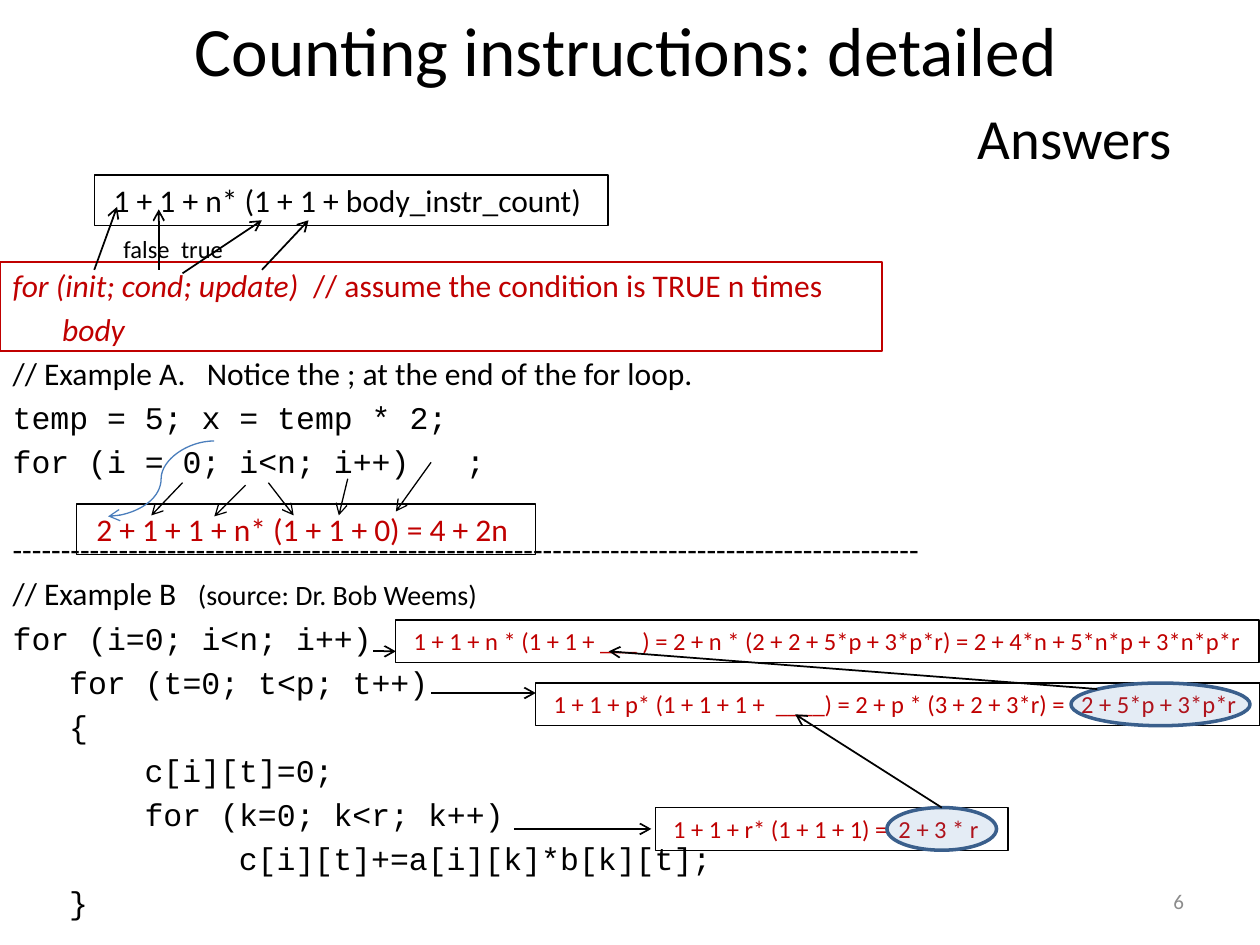
from lxml import etree
from pptx import Presentation
from pptx import util as u
from pptx.dml import color
from pptx.enum import shapes as sh, text as tx
from pptx.oxml import ns


class Theme:
    sans, mono = "Calibri", "Courier New"
    black, red, grey = "000000", "C00000", "8C8C8C"
    blue, navy, curve = "4F81BD", "3A5F8C", "4B7EBC"
    title, sub, body, note, small, foot = 39.6, 32.4, 18, 16, 14, 12
    thin, thick, ring = 0.75, 1, 2
    pitch = 25.2  # distance between body lines, pt
    step = 0.38   # width of one code character, cm
    alpha = 15    # opacity of a highlight, percent


def rgb(code):
    return color.RGBColor.from_string(code)


def apply(obj, **vals):
    for key, val in vals.items():
        setattr(obj, key, val)


class Deck:
    def __init__(self, wide, high):
        self.prs = Presentation()
        apply(self.prs, slide_width=u.Cm(wide), slide_height=u.Cm(high))
        self.page = self.prs.slides.add_slide(self.prs.slide_layouts[1])
        self.items = self.page.shapes

    def run(self, par, words, size=Theme.body, hue=Theme.black,
            face=Theme.sans, slant=False):
        run = par.add_run()
        run.text = words
        apply(run.font, size=u.Pt(size), name=face, italic=slant)
        run.font.color.rgb = rgb(hue)

    def place(self, item, left, top, wide, high):
        apply(item, left=u.Cm(left), top=u.Cm(top),
              width=u.Cm(wide), height=u.Cm(high))

    def title(self, spot, head, sub):
        item = self.items.title
        self.place(item, *spot)
        frame = item.text_frame
        apply(frame, auto_size=tx.MSO_AUTO_SIZE.NONE, word_wrap=True,
              vertical_anchor=tx.MSO_ANCHOR.MIDDLE,
              margin_left=u.Cm(1.42), margin_right=u.Cm(1.78))
        par = frame.paragraphs[0]
        par.alignment = tx.PP_ALIGN.CENTER
        self.run(par, head, Theme.title)
        par = frame.add_paragraph()
        apply(par, alignment=tx.PP_ALIGN.RIGHT, space_before=u.Pt(7))
        self.run(par, sub, Theme.sub)

    def body(self, spot, rows):
        """Each row is (indent in cm, space before in pt, runs)."""
        item = self.page.placeholders[1]
        self.place(item, *spot)
        frame = item.text_frame
        apply(frame, auto_size=tx.MSO_AUTO_SIZE.NONE, word_wrap=True,
              margin_top=u.Cm(0.58))
        for num, (dent, gap, runs) in enumerate(rows):
            par = frame.add_paragraph() if num else frame.paragraphs[0]
            apply(par, line_spacing=u.Pt(Theme.pitch), space_before=u.Pt(gap))
            props = par._p.get_or_add_pPr()
            props.set("marL", str(u.Cm(dent)))
            props.set("indent", "0")
            etree.SubElement(props, ns.qn("a:buNone"))
            for words, style in runs:
                self.run(par, words, **style)

    def label(self, spot, words, wrap=False, side=tx.PP_ALIGN.LEFT,
              anchor=tx.MSO_ANCHOR.TOP, **style):
        item = self.items.add_textbox(*map(u.Cm, spot))
        self.fill_in(item, words, wrap, side, anchor, style)

    def fill_in(self, item, words, wrap, side, anchor, style):
        frame = item.text_frame
        apply(frame, word_wrap=wrap, vertical_anchor=anchor)
        par = frame.paragraphs[0]
        par.alignment = side
        self.run(par, words, **style)

    def shape(self, kind, spot, hue, width):
        item = self.items.add_shape(kind, *map(u.Cm, spot))
        item.shadow.inherit = False
        item.fill.background()
        item.line.color.rgb = rgb(hue)
        item.line.width = u.Pt(width)
        return item

    def box(self, spot, words="", edge=Theme.black, **style):
        item = self.shape(sh.MSO_SHAPE.RECTANGLE, spot, edge, Theme.thin)
        if words:
            self.fill_in(item, words, False, tx.PP_ALIGN.LEFT,
                         tx.MSO_ANCHOR.TOP, style)

    def oval(self, spot):
        """Ring with a see-through fill."""
        item = self.shape(sh.MSO_SHAPE.OVAL, spot, Theme.navy, Theme.ring)
        item.fill.solid()
        item.fill.fore_color.rgb = rgb(Theme.blue)
        tint = item._element.spPr.find(".//" + ns.qn("a:srgbClr"))
        etree.SubElement(tint, ns.qn("a:alpha"), val=str(Theme.alpha * 1000))
        return item

    def arrow(self, ends, width, hue=Theme.black,
              kind=sh.MSO_CONNECTOR.STRAIGHT):
        item = self.items.add_connector(kind, *map(u.Cm, ends))
        item.line.color.rgb = rgb(hue)
        item.line.width = u.Pt(width)
        etree.SubElement(item.line._get_or_add_ln(), ns.qn("a:tailEnd"),
                         type="arrow")
        etree.SubElement(item._element.spPr, ns.qn("a:effectLst"))
        return item


def code(words, chars=0):
    return chars * Theme.step, 0, [(words, {"face": Theme.mono})]


def main():
    deck = Deck(25.4, 19.05)
    red = {"hue": Theme.red}
    slant = {**red, "slant": True}
    small = {**red, "size": Theme.small}

    deck.title((0.2, 0.2, 25.2, 3.18),
               "Counting instructions: detailed", "Answers")
    deck.body((0, 4.65, 20.32, 14.4), [
        (0, 0, [("for (init; cond; update)  ", slant),
                ("// assume the condition is TRUE n times", red)]),
        (1, 0, [("body", slant)]),
        (0, 0, [("// Example A.   Notice the ; at the end of the for loop.",
                 {})]),
        code("temp = 5; x = temp * 2;"),
        code("for (i = 0; i<n; i++)   ;"),
        (0, Theme.pitch, [("-" * 94, {})]),
        (0, 0, [("// Example B   ", {}),
                ("(source: Dr. Bob Weems)", {"size": Theme.note})]),
        code("for (i=0; i<n; i++)"),
        code("for (t=0; t<p; t++)", 3),
        code("{", 3),
        code("c[i][t]=0;", 7),
        code("for (k=0; k<r; k++)", 7),
        code("c[i][t]+=a[i][k]*b[k][t];", 12),
        code("}", 3),
    ])
    deck.label((18.2, 17.65, 5.92, 1.02), "6", True, tx.PP_ALIGN.RIGHT,
               tx.MSO_ANCHOR.MIDDLE, size=Theme.foot, hue=Theme.grey)

    deck.box((0, 5.28, 17.78, 1.8), edge=Theme.red)
    for spot, words, style in [
        ((1.9, 3.53, 10.36, 1.02),
         " 1 + 1 + n* (1 + 1 + body_instr_count)", {}),
        ((1.55, 10.16, 9.25, 1.02),
         " 2 + 1 + 1 + n* (1 + 1 + 0) = 4 + 2n", red),
        ((7.98, 12.5, 17.4, 0.86),
         " 1 + 1 + n * (1 + 1 + ___ ) = 2 + n * (2 + 2 + 5*p + 3*p*r)"
         " = 2 + 4*n + 5*n*p + 3*n*p*r", small),
        ((10.8, 13.77, 14.6, 0.86),
         " 1 + 1 + p* (1 + 1 + 1 +  ____) = 2 + p * (3 + 2 + 3*r)"
         " =   2 + 5*p + 3*p*r", small),
        ((13.21, 16.28, 7.11, 0.86),
         " 1 + 1 + r* (1 + 1 + 1) =  2 + 3 * r", small),
    ]:
        deck.box(spot, words, **style)
    for left, wide, words in [(2.24, 1.45, "false"), (3.4, 1.37, "true")]:
        deck.label((left, 4.6, wide, 0.86), words, size=Theme.small)

    inner = deck.oval((17.88, 16.28, 2.21, 0.86))
    deck.oval((21.59, 13.77, 3.61, 0.86))

    for ends in [(3.68, 9.73, 3.05, 10.39), (4.95, 9.78, 4.32, 10.41),
                 (5.41, 9.73, 5.92, 10.39), (7.01, 9.65, 6.83, 10.39),
                 (8.69, 9.32, 7.98, 10.31)]:
        deck.arrow(ends, Theme.thin)
    for ends in [(1.9, 5.44, 2.36, 4.17), (3.2, 5.44, 3.2, 4.22),
                 (3.68, 5.51, 5.28, 4.44), (5.28, 5.44, 6.22, 4.44),
                 (7.52, 13.13, 7.98, 13.13), (8.69, 13.97, 10.8, 13.97),
                 (10.36, 16.71, 13.13, 16.71), (22.12, 13.89, 12.27, 13.13)]:
        deck.arrow(ends, Theme.thick)
    link = deck.arrow((18.99, 16.28, 16.03, 14.4), Theme.thick)
    link.begin_connect(inner, 0)
    deck.arrow((4.32, 8.89, 2.18, 10.41), Theme.thin, Theme.curve,
               sh.MSO_CONNECTOR.CURVE)
    deck.prs.save("out.pptx")


if __name__ == "__main__":
    main()
